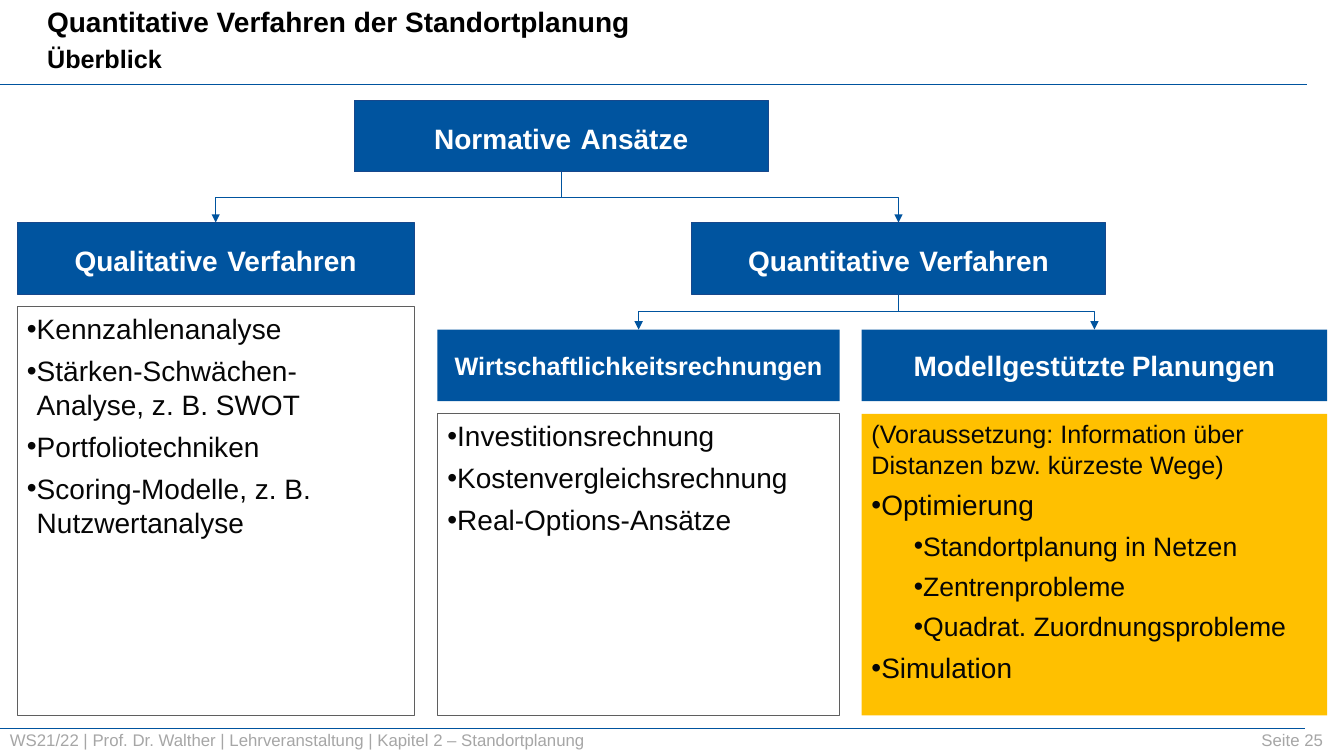
from dataclasses import dataclass
from typing import NamedTuple

from lxml import etree
from pptx import Presentation
from pptx.dml.color import RGBColor
from pptx.enum.shapes import MSO_CONNECTOR, MSO_SHAPE
from pptx.enum.text import MSO_ANCHOR, PP_ALIGN
from pptx.oxml.ns import qn
from pptx.util import Pt

RECTANGLE = MSO_SHAPE.RECTANGLE
STRAIGHT, ELBOW = MSO_CONNECTOR.STRAIGHT, MSO_CONNECTOR.ELBOW
TOP, MIDDLE = MSO_ANCHOR.TOP, MSO_ANCHOR.MIDDLE
LEFT, CENTER, RIGHT = PP_ALIGN.LEFT, PP_ALIGN.CENTER, PP_ALIGN.RIGHT


@dataclass(frozen=True)
class Theme:
    font: str = "Arial"
    blue: str = "00549F"
    blue_edge: str = "17488C"
    grey_edge: str = "5F5F5F"
    amber: str = "FFC000"
    white: str = "FFFFFF"
    black: str = "000000"
    ink: str = "060606"
    footer_grey: str = "A6A6A6"
    heading: int = 20
    subheading: int = 18
    item: int = 20
    subitem: int = 19
    note: int = 18
    footer: int = 12


THEME = Theme()


class Box(NamedTuple):
    left: float
    top: float
    width: float
    height: float

    @property
    def center(self):
        return self.left + self.width / 2

    @property
    def bottom(self):
        return self.top + self.height

    @property
    def lengths(self):
        return [Pt(length) for length in self]


class Style(NamedTuple):
    size: int
    indent: float = 0
    hanging: float = 0


NOTE = Style(THEME.note)
ITEM = Style(THEME.item, 7, 7)
SUBITEM = Style(THEME.subitem, 35.3, 5)


def rgb(value):
    return RGBColor.from_string(value)


def style_font(font, size, color, bold=False):
    font.name = THEME.font
    font.size = Pt(size)
    font.bold = bold
    font.color.rgb = rgb(color)


def add_rule(slide, left, right, y):
    rule = slide.shapes.add_connector(STRAIGHT, Pt(left), Pt(y), Pt(right), Pt(y))
    style_line(rule, 1)


def style_line(connector, weight):
    connector.line.color.rgb = rgb(THEME.blue)
    connector.line.width = Pt(weight)
    etree.SubElement(connector._element.spPr, qn("a:effectLst"))


def add_label(slide, box, text, align):
    frame = slide.shapes.add_textbox(*box.lengths).text_frame
    frame.word_wrap = True
    frame.vertical_anchor = MIDDLE
    if align == RIGHT:
        frame.margin_left = frame.margin_right = 0
        frame.margin_top = frame.margin_bottom = 0
    frame.text = text
    frame.paragraphs[0].alignment = align
    style_font(frame.paragraphs[0].runs[0].font, THEME.footer, THEME.footer_grey)


def add_title(slide, box, title, subtitle):
    frame = slide.shapes.add_textbox(*box.lengths).text_frame
    frame.word_wrap = True
    frame.text = f"{title}\n{subtitle}"
    for line, size in zip(frame.paragraphs, (THEME.heading, THEME.subheading)):
        style_font(line.runs[0].font, size, THEME.black, True)
    frame.paragraphs[1].space_before = Pt(3.6)
    add_rule(slide, 0, 933.8, 60.5)


def add_footer(slide, box, course, page):
    add_rule(slide, box.left - 1, 932.4, box.top + 2.8)
    add_label(slide, Box(box.left, box.top, 737, box.height), course, LEFT)
    add_label(slide, Box(831.6, box.top + 3.6, 113.5, 14.4), page, RIGHT)


def add_rectangle(slide, box, fill, edge, anchor):
    rectangle = slide.shapes.add_shape(RECTANGLE, *box.lengths)
    rectangle.shadow.inherit = False
    rectangle.fill.solid()
    rectangle.fill.fore_color.rgb = rgb(fill)
    if edge:
        rectangle.line.color.rgb = rgb(edge)
        rectangle.line.width = Pt(0.75)
    else:
        rectangle.line.fill.background()
    rectangle.text_frame.word_wrap = True
    rectangle.text_frame.vertical_anchor = anchor
    return rectangle.text_frame


def add_node(slide, box, text, size=THEME.heading, space_size=24, edge=THEME.blue_edge):
    paragraph = add_rectangle(slide, box, THEME.blue, edge, MIDDLE).paragraphs[0]
    paragraph.alignment = CENTER
    first, space, last = text.partition(" ")
    for part, part_size in ((first, size), (space, space_size), (last, size)):
        if part:
            run = paragraph.add_run()
            run.text = part
            style_font(run.font, part_size, THEME.white, True)


def add_panel(slide, box, entries, fill=THEME.white, edge=THEME.grey_edge):
    frame = add_rectangle(slide, box, fill, edge, TOP)
    for position, (text, style) in enumerate(entries):
        paragraph = frame.add_paragraph() if position else frame.paragraphs[0]
        paragraph.text = text
        paragraph.alignment = LEFT
        paragraph.space_after = Pt(6)
        if style.hanging:
            properties = paragraph._p.get_or_add_pPr()
            properties.set("marL", str(Pt(style.indent)))
            properties.set("indent", str(-Pt(style.hanging)))
            etree.SubElement(properties, qn("a:buFont"), typeface=THEME.font)
            etree.SubElement(properties, qn("a:buChar"), char="•")
        for run in paragraph.runs:
            style_font(run.font, style.size, THEME.ink)


def add_branch(slide, parent, child):
    drop = child.top - parent.bottom
    reach = abs(child.center - parent.center)
    left = (parent.center + child.center - drop) / 2
    top = (parent.bottom + child.top - reach) / 2
    branch = slide.shapes.add_connector(
        ELBOW, Pt(left), Pt(top), Pt(left + drop), Pt(top + reach))
    turn = branch._element.spPr.find(qn("a:xfrm"))
    if child.center < parent.center:
        turn.set("rot", "5400000")
    else:
        turn.set("rot", "16200000")
        turn.set("flipH", "1")
    style_line(branch, 0.75)
    etree.SubElement(branch.line._get_or_add_ln(), qn("a:tailEnd"), type="triangle")


def add_method_tree(slide, area):
    height, gap = 51.2, 9
    second_row, third_row = area.top + 87.4, area.top + 163.8
    normative = Box(area.left + 240.7, area.top, 296, height)
    qualitative = Box(area.left, second_row, 283.7, height)
    quantitative = Box(area.left + 481.6, second_row, 296, height)
    economic = Box(area.left + 300.3, third_row, 287.3, height)
    modelled = Box(area.left + 603.2, third_row, 332.6, height)

    def panel_below(node):
        top = node.bottom + gap
        return Box(node.left, top, node.width, area.bottom - top)

    add_node(slide, normative, "Normative Ansätze")
    add_node(slide, qualitative, "Qualitative Verfahren")
    add_node(slide, quantitative, "Quantitative Verfahren")
    add_node(slide, economic, "Wirtschaftlichkeitsrechnungen", size=18, edge=None)
    add_node(slide, modelled, "Modellgestützte Planungen", space_size=16, edge=None)

    for parent, children in ((normative, (qualitative, quantitative)),
                             (quantitative, (economic, modelled))):
        for child in children:
            add_branch(slide, parent, child)

    add_panel(slide, panel_below(qualitative), [
        ("Kennzahlenanalyse", ITEM),
        ("Stärken-Schwächen-Analyse, z. B. SWOT", ITEM),
        ("Portfoliotechniken", ITEM),
        ("Scoring-Modelle, z. B.\vNutzwertanalyse", ITEM)])
    add_panel(slide, panel_below(economic), [
        ("Investitionsrechnung", ITEM),
        ("Kostenvergleichsrechnung", ITEM),
        ("Real-Options-Ansätze", ITEM)])
    add_panel(slide, panel_below(modelled), [
        ("(Voraussetzung: Information über Distanzen bzw. kürzeste Wege)", NOTE),
        ("Optimierung", ITEM),
        ("Standortplanung in Netzen", SUBITEM),
        ("Zentrenprobleme", SUBITEM),
        ("Quadrat. Zuordnungsprobleme", SUBITEM),
        ("Simulation", ITEM)], THEME.amber, None)


def main():
    deck = Presentation()
    deck.slide_width, deck.slide_height = Pt(960), Pt(540)
    slide = deck.slides.add_slide(deck.slide_layouts[6])
    add_title(slide, Box(26.6, 0, 643, 57.6),
              "Quantitative Verfahren der Standortplanung", "Überblick")
    add_footer(slide, Box(0, 517.7, 960, 21.6),
               "WS21/22 | Prof. Dr. Walther | Lehrveranstaltung | Kapitel 2 – Standortplanung",
               "Seite 25")
    add_method_tree(slide, Box(12.2, 71.6, 936, 439.4))
    deck.save("out.pptx")


if __name__ == "__main__":
    main()
